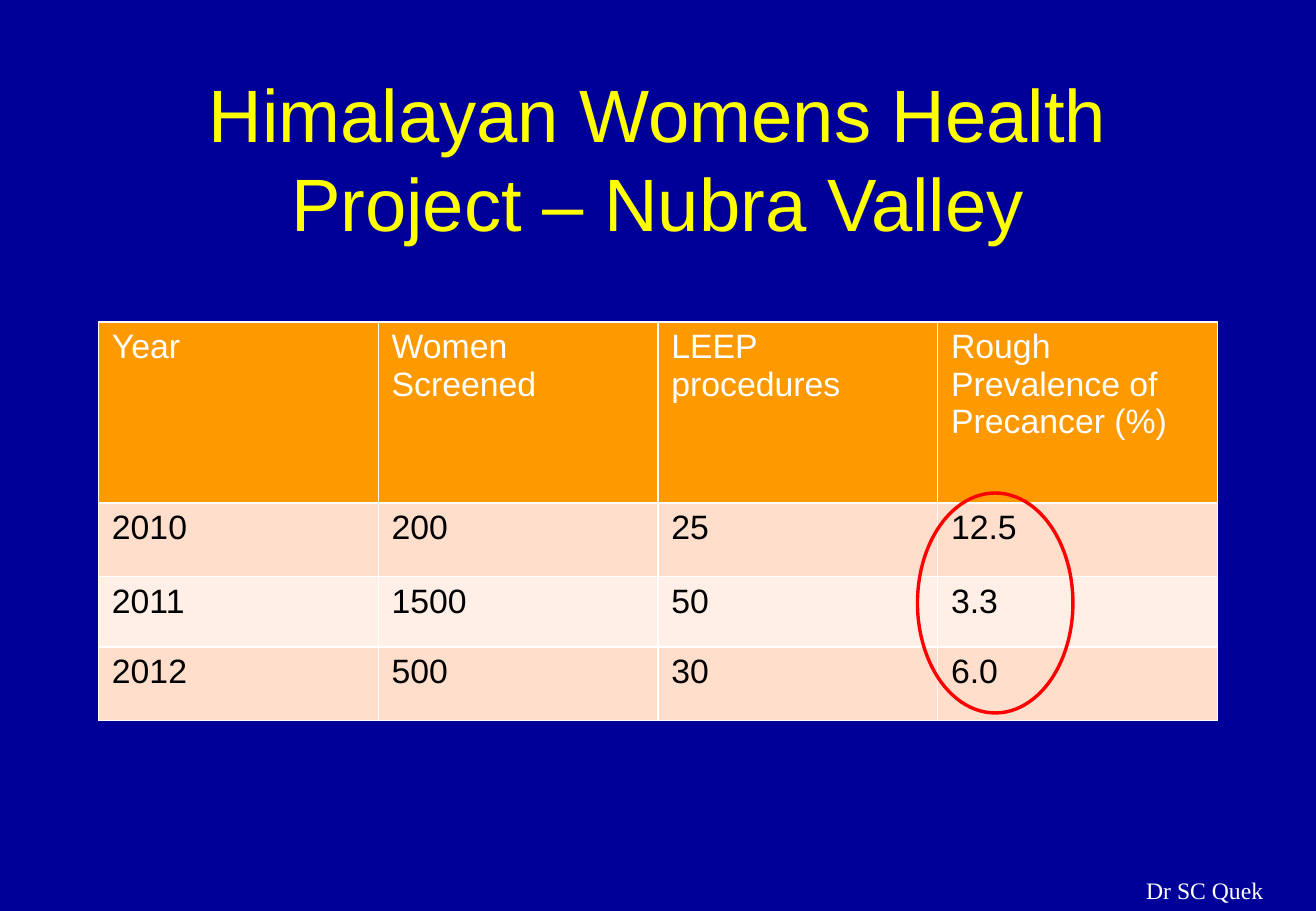
from lxml.etree import SubElement
from pptx import Presentation
from pptx.dml.color import RGBColor
from pptx.enum.shapes import MSO_SHAPE as Shape
from pptx.enum.text import MSO_ANCHOR as Anchor, MSO_AUTO_SIZE as Fit, PP_ALIGN as Align
from pptx.oxml.ns import qn
from pptx.util import Cm, Pt

ROWS = [
    ["Year", "Women Screened", "LEEP procedures", "Rough Prevalence of Precancer (%)"],
    ["2010", "200", "25", "12.5"],
    ["2011", "1500", "50", "3.3"],
    ["2012", "500", "30", "6.0"],
]
HEIGHTS = [3.79, 1.54, 1.47, 1.54]
FILLS = ["FF9900", "FFDECC", "FFEFE7", "FFDECC"]


def color(code):
    return RGBColor.from_string(code)


def write(frame, text, size=20, font="Arial", ink="FFFFFF", align=Align.LEFT):
    frame.word_wrap = True
    par = frame.paragraphs[0]
    par.alignment = align
    run = par.add_run()
    run.text = text
    run.font.size = Pt(size)
    run.font.name = font
    run.font.color.rgb = color(ink)


def place(shape, left, top, width, height):
    shape.left, shape.top = Cm(left), Cm(top)
    shape.width, shape.height = Cm(width), Cm(height)


def edge(cell, ink="FFFFFF", width=1):
    """Draw all four borders of a cell; call before its fill is set."""
    props = cell._tc.get_or_add_tcPr()
    for side in "LRTB":
        line = SubElement(props, qn(f"a:ln{side}"), w=str(Pt(width)))
        fill = SubElement(line, qn("a:solidFill"))
        SubElement(fill, qn("a:srgbClr"), val=ink)


def add_title(slide, *box):
    title = slide.shapes.title
    place(title, *box)
    frame = title.text_frame
    frame.auto_size = Fit.NONE
    frame.vertical_anchor = Anchor.MIDDLE
    write(frame, "Himalayan Womens Health Project – Nubra Valley",
          size=44, ink="FFFF00", align=Align.CENTER)


def add_grid(slide, left, top, width):
    """Place the results table and the ring round its last column."""
    count = len(ROWS[0])
    table = slide.shapes.add_table(len(ROWS), count, Cm(left), Cm(top),
                                   Cm(width), Cm(sum(HEIGHTS))).table
    for col in table.columns:
        col.width = Cm(width / count)
    for r, (row, height, fill) in enumerate(zip(ROWS, HEIGHTS, FILLS)):
        table.rows[r].height = Cm(height)
        for c, text in enumerate(row):
            cell = table.cell(r, c)
            edge(cell)
            cell.fill.solid()
            cell.fill.fore_color.rgb = color(fill)
            cell.margin_left = cell.margin_right = Cm(0.28)
            write(cell.text_frame, text, ink="000000" if r else "FFFFFF")
            cell.text_frame.paragraphs[0].runs[0].font.bold = False

    ring = slide.shapes.add_shape(Shape.OVAL, Cm(left + 17.12), Cm(top + 3.58),
                                  Cm(3.25), Cm(4.6))
    ring.shadow.inherit = False
    ring.fill.background()
    ring.line.color.rgb = color("FF0000")
    ring.line.width = Pt(2)


def add_credit(slide, *box):
    note = slide.shapes.add_textbox(*map(Cm, box))
    write(note.text_frame, "Dr SC Quek", size=14, font="Times New Roman",
          align=Align.CENTER)


def main():
    deck = Presentation()
    deck.slide_width, deck.slide_height = Cm(27.51), Cm(19.05)
    slide = deck.slides.add_slide(deck.slide_layouts[5])
    slide.background.fill.solid()
    slide.background.fill.fore_color.rgb = color("000099")
    add_title(slide, 2.06, 1.7, 23.39, 3.18)
    add_grid(slide, 2.06, 6.73, 23.39)
    add_credit(slide, 22.86, 18.19, 4.65, 0.86)
    deck.save("out.pptx")


if __name__ == "__main__":
    main()
